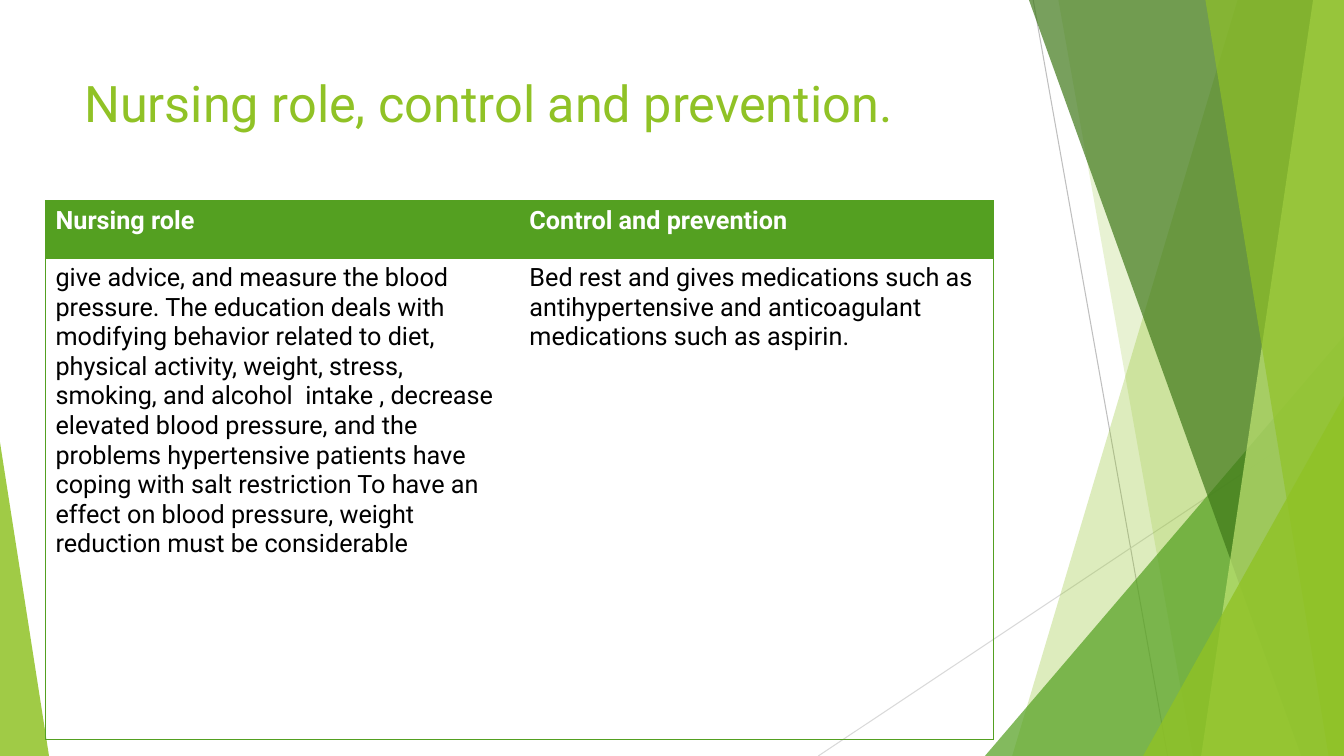
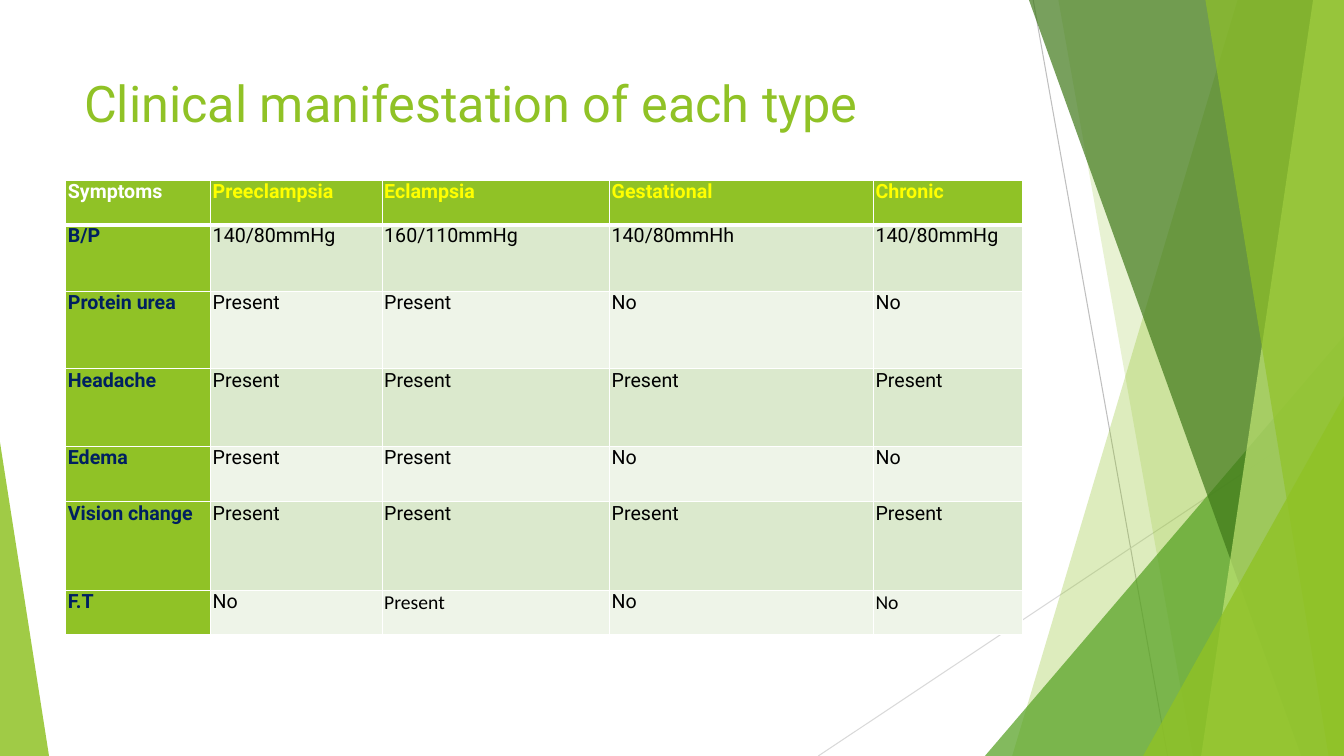
from lxml import etree
from pptx import Presentation
from pptx.dml.color import RGBColor
from pptx.enum import shapes, text
from pptx.oxml import ns
from pptx.util import Pt

LIME, GREEN, FOREST, PALE = "90C226", "54A021", "3F7819", "C0E474"
WHITE, BLACK, NAVY, YELLOW = "FFFFFF", "000000", "002060", "FFFF00"
BANDS = ["DBE9CD", "EEF4E8"]
WIDTH, HEIGHT = 960, 540


def color(value):
    return RGBColor.from_string(value)


def child(parent, tag, **attributes):
    return etree.SubElement(parent, ns.qn(tag), attributes)


def write(frame, words, size=18, font="Roboto", ink=BLACK, bold=False):
    frame.word_wrap = True
    span = frame.paragraphs[0].add_run()
    span.text = words
    span.font.size, span.font.name, span.font.bold = Pt(size), font, bold
    span.font.color.rgb = color(ink)


class Deck:
    def __init__(self):
        self.deck = Presentation()
        self.deck.slide_width, self.deck.slide_height = Pt(WIDTH), Pt(HEIGHT)
        self.page = None

    # A new page with the shared decoration and title
    def add_page(self, title):
        self.page = self.deck.slides.add_slide(self.deck.slide_layouts[6])
        self.line(738, 0, 834, HEIGHT, "BFBFBF")
        self.line(WIDTH, 290, 584.5, HEIGHT, "D9D9D9")
        self.band(884, 723, LIME, 30)
        self.band(756, 852, LIME, 20)
        self.triangle(703.5, 240, 256.5, GREEN, 72, tip=1)
        self.band(735, 929.5, FOREST, 70)
        self.band(938, 858, PALE, 70)
        self.band(861, 949, LIME, 65)
        self.triangle(816.5, 283, 143.5, LIME, 80, tip=1)
        self.triangle(0, 316, 35, LIME, 85, tip=0)
        box = self.page.shapes.add_textbox(Pt(53), Pt(48), Pt(677), Pt(72))
        write(box.text_frame, title, size=36, ink=LIME)

    def line(self, x1, y1, x2, y2, ink):
        rule = self.page.shapes.add_connector(
            shapes.MSO_CONNECTOR.STRAIGHT, Pt(x1), Pt(y1), Pt(x2), Pt(y2))
        rule.line.color.rgb, rule.line.width = color(ink), Pt(0.75)
        child(rule._element.spPr, "a:effectLst")

    def paint(self, shape, fill, opacity):
        shape.shadow.inherit = False
        shape.line.fill.background()
        shape.fill.solid()
        shape.fill.fore_color.rgb = color(fill)
        tone = shape._element.spPr.find(".//" + ns.qn("a:srgbClr"))
        child(tone, "a:alpha", val=str(opacity * 1000))

    # A full-height band from a slanted left edge to the right side
    def band(self, top_x, bottom_x, fill, opacity):
        outline = self.page.shapes.build_freeform(Pt(top_x), 0)
        outline.add_line_segments(
            [(Pt(WIDTH), 0), (Pt(WIDTH), Pt(HEIGHT)), (Pt(bottom_x), Pt(HEIGHT))])
        self.paint(outline.convert_to_shape(), fill, opacity)

    # A triangle that stands on the bottom edge
    def triangle(self, left, top, width, fill, opacity, tip):
        shape = self.page.shapes.add_shape(
            shapes.MSO_SHAPE.ISOSCELES_TRIANGLE,
            Pt(left), Pt(top), Pt(width), Pt(HEIGHT - top))
        shape.adjustments[0] = tip
        self.paint(shape, fill, opacity)

    # Borders go in the order left, right, top, bottom; width 0 means none
    def borders(self, cell, ink, widths):
        properties = cell._tc.get_or_add_tcPr()
        for side, width in zip("LRTB", widths):
            edge = child(properties, "a:ln" + side, w=str(Pt(width)))
            if width:
                child(child(edge, "a:solidFill"), "a:srgbClr", val=ink)
            else:
                child(edge, "a:noFill")

    # style(row, column) gives fill, border ink, border widths and text format
    def table(self, left, top, widths, heights, rows, style, insets=None):
        grid = self.page.shapes.add_table(
            len(heights), len(widths), Pt(left), Pt(top),
            Pt(sum(widths)), Pt(sum(heights))).table
        grid.first_row = grid.horz_banding = False
        for column, width in zip(grid.columns, widths):
            column.width = Pt(width)
        for r, (height, row) in enumerate(zip(heights, rows)):
            grid.rows[r].height = Pt(height)
            for c, words in enumerate(row):
                cell = grid.cell(r, c)
                fill, ink, edges, form = style(r, c)
                self.borders(cell, ink, edges)
                if fill:
                    cell.fill.solid()
                    cell.fill.fore_color.rgb = color(fill)
                else:
                    cell.fill.background()
                if insets:
                    cell.margin_left = cell.margin_right = Pt(insets[0])
                    cell.margin_top = cell.margin_bottom = Pt(insets[1])
                cell.vertical_anchor = text.MSO_ANCHOR.TOP
                write(cell.text_frame, words, **form)


def role_style(row, column):
    edges = (column == 0, column == 1, 1, row == 1)
    if row == 0:
        return GREEN, GREEN, edges, dict(ink=WHITE, bold=True)
    return None, GREEN, edges, {}


def symptom_style(row, column):
    edges = (1, 1, 1, 3 if row == 0 else 1)
    form = dict(size=14, bold=row == 0 or column == 0)
    fill = LIME
    if row == 0:
        form["ink"] = YELLOW if column else WHITE
    elif column == 0:
        form["ink"] = NAVY
    else:
        fill = BANDS[(row - 1) % 2]
        if row == 6 and column in (2, 4):
            form["font"] = "Calibri"
    return fill, WHITE, edges, form


ROLES = [
    ["Nursing role", "Control and prevention"],
    ["give advice, and measure the blood pressure. The education deals with "
     "modifying behavior related to diet, physical activity, weight, stress, "
     "smoking, and alcohol  intake , decrease elevated blood pressure, and the "
     "problems hypertensive patients have coping with salt restriction To have "
     "an effect on blood pressure, weight reduction must be considerable",
     "Bed rest and gives medications such as antihypertensive and "
     "anticoagulant medications such as aspirin."],
]
SYMPTOMS = [
    ["Symptoms", "Preeclampsia", "Eclampsia", "Gestational", "Chronic"],
    ["B/P", "140/80mmHg", "160/110mmHg", "140/80mmHh", "140/80mmHg"],
    ["Protein urea", "Present", "Present", "No", "No"],
    ["Headache", "Present", "Present", "Present", "Present"],
    ["Edema", "Present", "Present", "No", "No"],
    ["Vision change", "Present", "Present", "Present", "Present"],
    ["F.T", "No", "Present", "No", "No"],
]


def main():
    show = Deck()

    # Nursing role
    show.add_page("Nursing role, control and prevention.")
    show.table(32.5, 143.5, [338.5] * 2, [41, 344], ROLES, role_style)

    # Clinical manifestation
    show.add_page("Clinical manifestation of each type")
    show.table(47, 129, [103.5, 122.5, 162.5, 188.5, 106.5],
               [31.5, 47.5, 55.5, 55.5, 39.5, 63.5, 31.5],
               SYMPTOMS, symptom_style, insets=(1.5, 0))

    show.deck.save("out.pptx")


if __name__ == "__main__":
    main()
